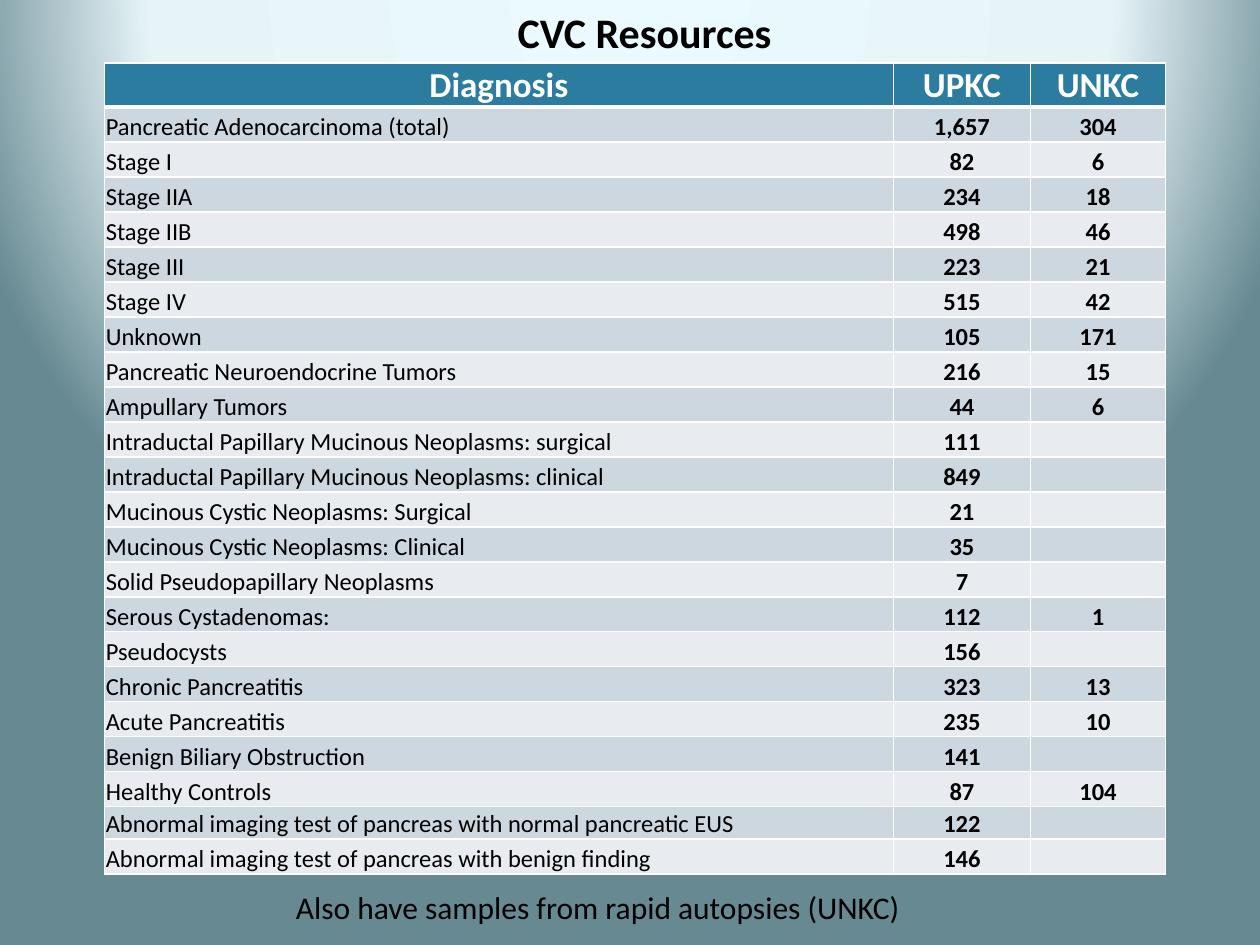
from pptx import Presentation
from pptx.dml.color import RGBColor
from pptx.enum.text import MSO_ANCHOR, PP_ALIGN
from pptx.oxml import parse_xml
from pptx.oxml.ns import nsdecls, qn
from pptx.util import Inches, Pt

CENTER, LEFT, BOTTOM = PP_ALIGN.CENTER, PP_ALIGN.LEFT, MSO_ANCHOR.BOTTOM
BLACK = RGBColor(0x00, 0x00, 0x00)
WHITE = RGBColor(0xFF, 0xFF, 0xFF)
HEADER_BLUE = RGBColor(0x2C, 0x7C, 0x9F)
BANDS = RGBColor(0xCD, 0xD7, 0xDF), RGBColor(0xE8, 0xEC, 0xF0)
GLOW = ((0, RGBColor(0xEB, 0xFA, 0xFF)), (61, RGBColor(0xE6, 0xF4, 0xF8)),
        (88, RGBColor(0x67, 0x89, 0x92)))
FONT = "Calibri"

COLUMNS = (6.26, 1.09, 1.07)
HEADER_HEIGHT, ROW_HEIGHT, TIGHT_HEIGHT = Pt(25), Pt(20), Pt(18.5)
TIGHT_ROW = 21
HEADER = ("Diagnosis", "UPKC", "UNKC")
COUNTS = [
    ("Pancreatic Adenocarcinoma (total)", "1,657", "304"),
    ("Stage I", "82", "6"),
    ("Stage IIA", "234", "18"),
    ("Stage IIB", "498", "46"),
    ("Stage III", "223", "21"),
    ("Stage IV", "515", "42"),
    ("Unknown", "105", "171"),
    ("Pancreatic Neuroendocrine Tumors", "216", "15"),
    ("Ampullary Tumors", "44", "6"),
    ("Intraductal Papillary Mucinous Neoplasms: surgical", "111", ""),
    ("Intraductal Papillary Mucinous Neoplasms: clinical", "849", ""),
    ("Mucinous Cystic Neoplasms: Surgical", "21", ""),
    ("Mucinous Cystic Neoplasms: Clinical", "35", ""),
    ("Solid Pseudopapillary Neoplasms", "7", ""),
    ("Serous Cystadenomas:", "112", "1"),
    ("Pseudocysts", "156", ""),
    ("Chronic Pancreatitis", "323", "13"),
    ("Acute Pancreatitis", "235", "10"),
    ("Benign Biliary Obstruction", "141", ""),
    ("Healthy Controls", "87", "104"),
    ("Abnormal imaging test of pancreas with normal pancreatic EUS", "122", ""),
    ("Abnormal imaging test of pancreas with benign finding", "146", ""),
]


def set_font(p, size, color, bold):
    p.font.name, p.font.size, p.font.bold = FONT, Pt(size), bold
    p.font.color.rgb = color


def paint_background(s):
    """Fill the slide with a round glow centred above its top edge."""
    s.background.fill.solid()
    stops = "".join(f'<a:gs pos="{pos * 1000}"><a:srgbClr val="{color}"/></a:gs>'
                    for pos, color in GLOW)
    glow = parse_xml(
        f'<a:gradFill {nsdecls("a")} rotWithShape="1"><a:gsLst>{stops}</a:gsLst>'
        '<a:path path="circle"><a:fillToRect l="50000" t="-80000" r="50000" b="180000"/>'
        '</a:path></a:gradFill>')
    bg = s._element.find(".//" + qn("p:bgPr"))
    bg.replace(bg.find(qn("a:solidFill")), glow)


def add_borders(cell, bottom):
    tc_pr = cell._tc.get_or_add_tcPr()
    widths = {"lnL": 1, "lnR": 1, "lnT": 1, "lnB": bottom}
    for i, (side, width) in enumerate(widths.items()):
        tc_pr.insert(i, parse_xml(
            f'<a:{side} {nsdecls("a")} w="{Pt(width)}"><a:solidFill>'
            f'<a:srgbClr val="{WHITE}"/></a:solidFill></a:{side}>'))


def fill_cell(cell, text, row, col):
    header = row == 0
    cell.fill.solid()
    cell.fill.fore_color.rgb = HEADER_BLUE if header else BANDS[(row - 1) % 2]
    cell.vertical_anchor = BOTTOM
    cell.margin_left = cell.margin_right = cell.margin_top = Inches(0.01)
    cell.margin_bottom = 0
    p = cell.text_frame.paragraphs[0]
    p.alignment = CENTER if header or col else LEFT
    set_font(p, 20 if header else 14, WHITE if header else BLACK, header or col > 0)
    if text:
        p.add_run().text = text
    else:  # an empty cell takes its line height from the paragraph end
        p._p.append(parse_xml(f'<a:endParaRPr {nsdecls("a")} sz="1400"/>'))
    add_borders(cell, 3 if header else 1)


def add_counts_table(s, left, top):
    rows = [HEADER, *COUNTS]
    heights = [HEADER_HEIGHT] + [ROW_HEIGHT] * len(COUNTS)
    heights[TIGHT_ROW] = TIGHT_HEIGHT
    table = s.shapes.add_table(len(rows), len(COLUMNS), left, top,
                               Inches(sum(COLUMNS)), sum(heights)).table
    for column, width in zip(table.columns, COLUMNS):
        column.width = Inches(width)
    for r, (height, values) in enumerate(zip(heights, rows)):
        table.rows[r].height = height
        for c, text in enumerate(values):
            fill_cell(table.cell(r, c), text, r, c)


def add_caption(s, box, text, size, bold=False):
    tf = s.shapes.add_textbox(*map(Inches, box)).text_frame
    tf.word_wrap = False
    p = tf.paragraphs[0]
    p.text = text
    set_font(p, size, BLACK, bold)


def main():
    prs = Presentation()
    prs.slide_width, prs.slide_height = Inches(10), Inches(7.5)
    s = prs.slides.add_slide(prs.slide_layouts[6])
    paint_background(s)
    add_counts_table(s, Inches(0.83), Inches(0.5))
    add_caption(s, (4.01, 0, 2.24, 0.5), "CVC Resources", 24, bold=True)
    add_caption(s, (2.25, 7, 5.14, 0.4),
                "Also have samples from rapid autopsies (UNKC)", 18)
    prs.save("out.pptx")


if __name__ == "__main__":
    main()
